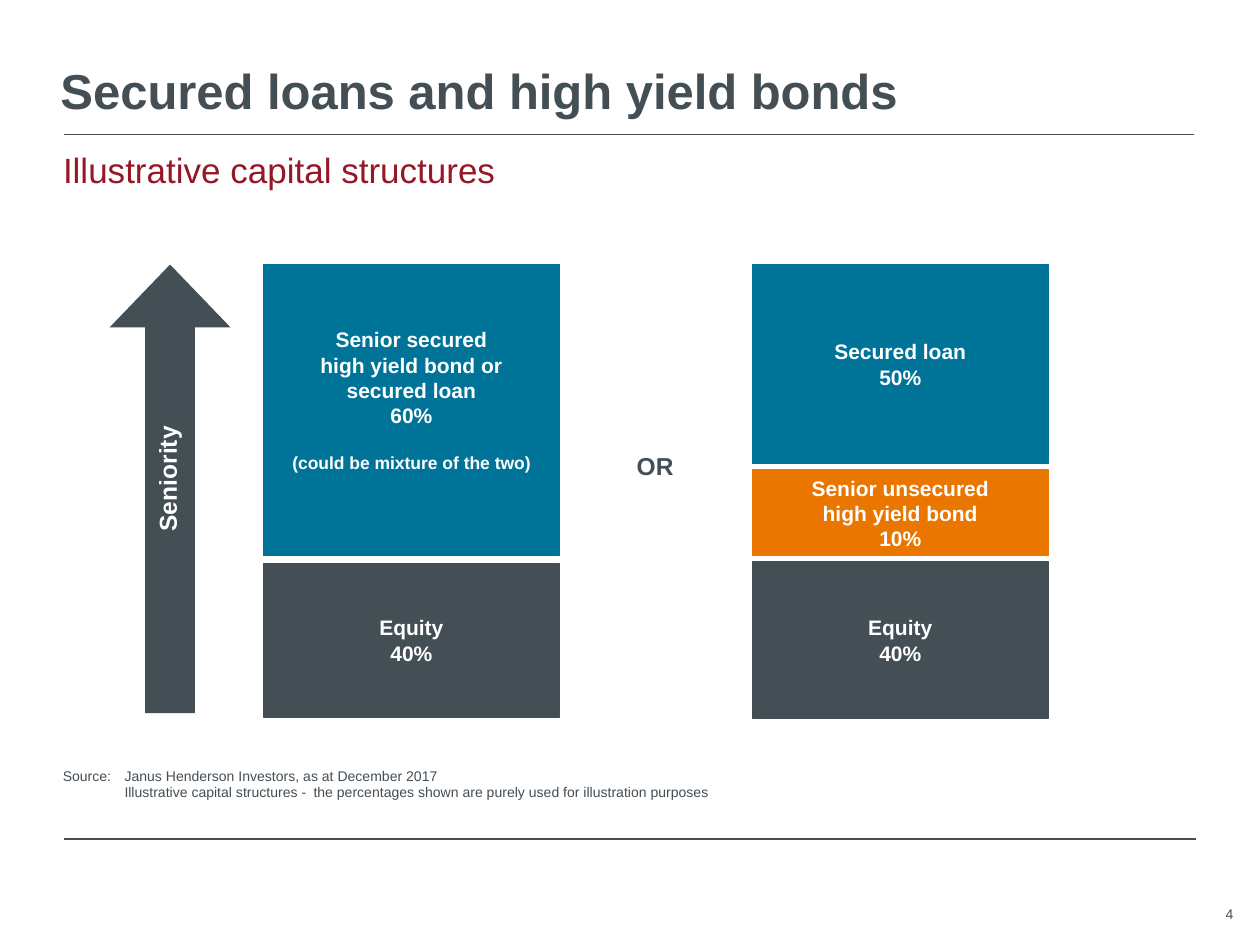
from pptx import Presentation
from pptx.dml.color import RGBColor
from pptx.enum.shapes import MSO_CONNECTOR as Conn, MSO_SHAPE as Shape
from pptx.enum.text import MSO_ANCHOR as Anchor, PP_ALIGN as Align
from pptx.oxml.ns import qn
from pptx.util import Inches, Pt

HUE = {"slate": "444E55", "red": "951826", "orange": "EA7600",
       "teal": "007398", "white": "FFFFFF"}

RULES = [(1.07, 9.48), (6.66, 9.49)]  # y, right end
RULE_X = 0.51

# text lines, place, font size, colour, bold, alignment, anchor, inset
LABELS = [
    (["4"], (9.41, 7.05, 0.38, 0.4), 8, "slate", False, "RIGHT", "MIDDLE", 0),
    (["Secured loans and high yield bonds"], (0.48, 0.36, 9, 0.71),
     28, "slate", True, "LEFT", "MIDDLE", 0),
    (["Illustrative capital structures"], (0.5, 1.18, 9.01, 0.37),
     20, "red", False, "LEFT", "TOP", 0),
    (["OR"], (4.55, 3.53, 1.3, 0.34), 14, "slate", True, "CENTER", "TOP", None),
]
SOURCE = ["Source:\tJanus Henderson Investors, as at December 2017",
          "\tIllustrative capital structures -\t"
          "the percentages shown are purely used for illustration purposes"]
HANG = 0.49

TOP, WIDE = 2.1, 2.35
NOTE = "(could be mixture of the two)"
# left edge, gap, then blocks from senior to junior: lines, height, colour
STACKS = [
    (2.09, 0.06, [
        (["Senior secured", "high yield bond or", "secured loan", "60%", NOTE],
         2.31, "teal"),
        (["Equity", "40%"], 1.22, "slate")]),
    (5.97, 0.05, [
        (["Secured loan", "50%"], 1.58, "teal"),
        (["Senior unsecured", "high yield bond", "10%"], 0.68, "orange"),
        (["Equity", "40%"], 1.24, "slate")]),
]


def color(name):
    return RGBColor.from_string(HUE[name])


def box(place):
    return [Inches(v) for v in place]


def write(shape, lines, size, hue, bold=False, align="LEFT", anchor="TOP",
          inset=None, wrap=True):
    frame = shape.text_frame
    frame.word_wrap = wrap
    frame.vertical_anchor = Anchor[anchor]
    if inset is not None:
        for side in ("left", "top", "right", "bottom"):
            setattr(frame, f"margin_{side}", Inches(inset))
    look = {"name": "Arial", "size": Pt(size), "bold": bold}
    for i, line in enumerate(lines):
        para = frame.add_paragraph() if i else frame.paragraphs[0]
        para.alignment = Align[align]
        run = para.add_run()
        run.text = line
        for key, value in look.items():
            setattr(run.font, key, value)
        run.font.color.rgb = color(hue)
    return frame


def block(kind, place, hue):
    shape = slide.shapes.add_shape(kind, *box(place))
    shape.shadow.inherit = False
    shape.fill.solid()
    shape.fill.fore_color.rgb = color(hue)
    return shape


deck = Presentation()
deck.slide_width, deck.slide_height = Inches(10), Inches(7.5)
slide = deck.slides.add_slide(deck.slide_layouts[6])

for y, end in RULES:
    rule = slide.shapes.add_connector(Conn.STRAIGHT, *box((RULE_X, y, end, y)))
    rule.line.color.rgb = color("slate")
    rule.line.width = Pt(0.75)
    props = rule.element.spPr
    props.append(props.makeelement(qn("a:effectLst"), {}))

for lines, place, *style in LABELS:
    write(slide.shapes.add_textbox(*box(place)), lines, *style)

source = slide.shapes.add_textbox(*box((0.4, 6.04, 7.37, 0.37)))
for para in write(source, SOURCE, 8, "slate").paragraphs:
    props = para._p.get_or_add_pPr()
    props.set("marL", str(Inches(HANG)))
    props.set("indent", str(-Inches(HANG)))

for left, gap, parts in STACKS:
    y = TOP
    for lines, high, hue in parts:
        part = block(Shape.RECTANGLE, (left, y, WIDE, high), hue)
        part.line.color.rgb = color(hue)
        part.line.width = Pt(0.75)
        frame = write(part, lines, 12, "white", True, "CENTER", "MIDDLE",
                      wrap=False)
        if lines[-1] == NOTE:
            last = frame.paragraphs[-1]
            last.space_before = Pt(14)
            last.runs[0].font.size = Pt(10)
            frame.margin_bottom = Inches(0.21)
        y += high + gap

arrow = block(Shape.UP_ARROW, (0.87, TOP, 0.96, 3.56), "slate")
arrow.line.fill.background()
arrow.adjustments[0], arrow.adjustments[1] = 0.41, 0.52
label = slide.shapes.add_textbox(*box((0.6, 3.63, 1.46, 0.34)))
label.rotation = 270
write(label, ["Seniority"], 14, "white", True, "CENTER")

deck.save("out.pptx")
